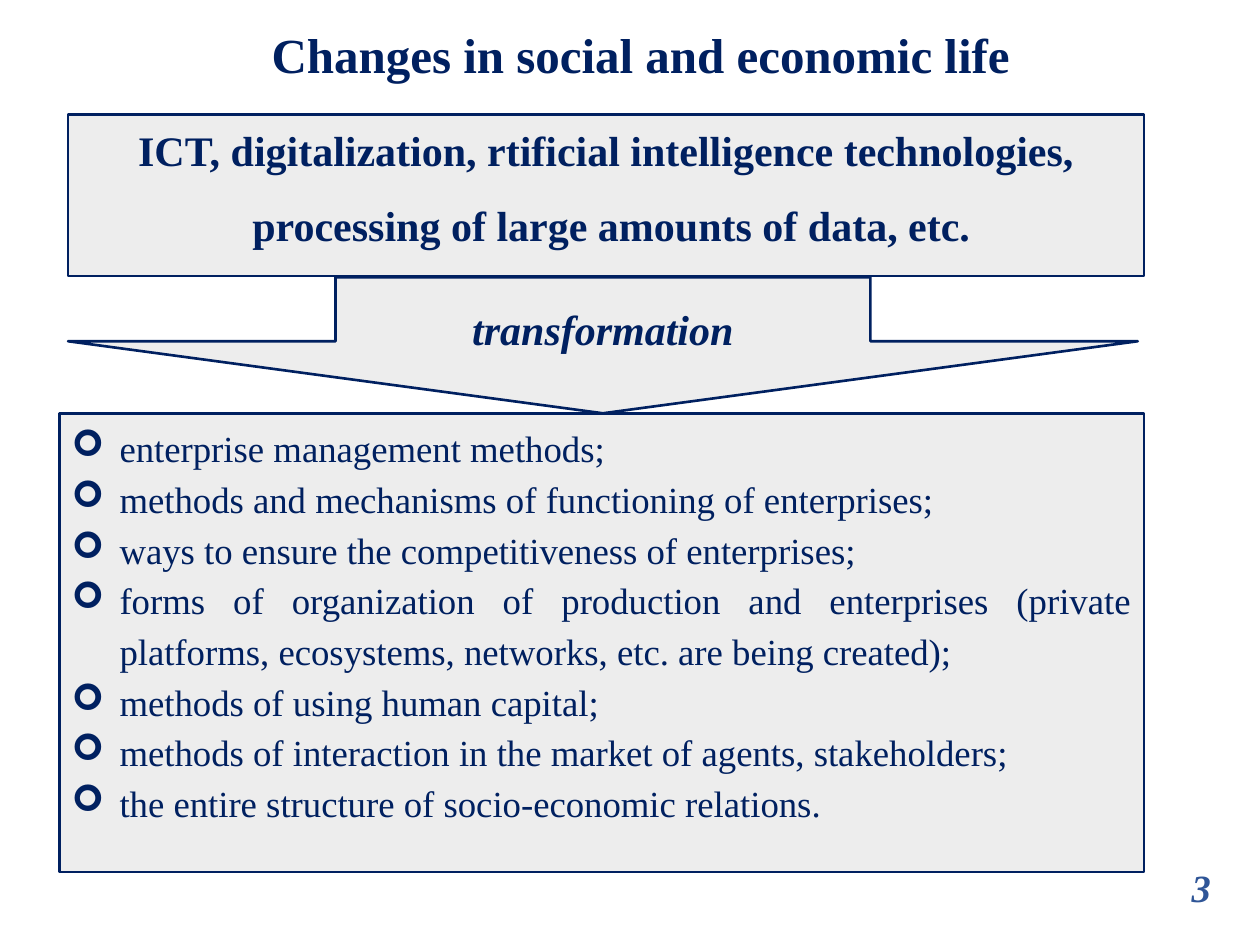
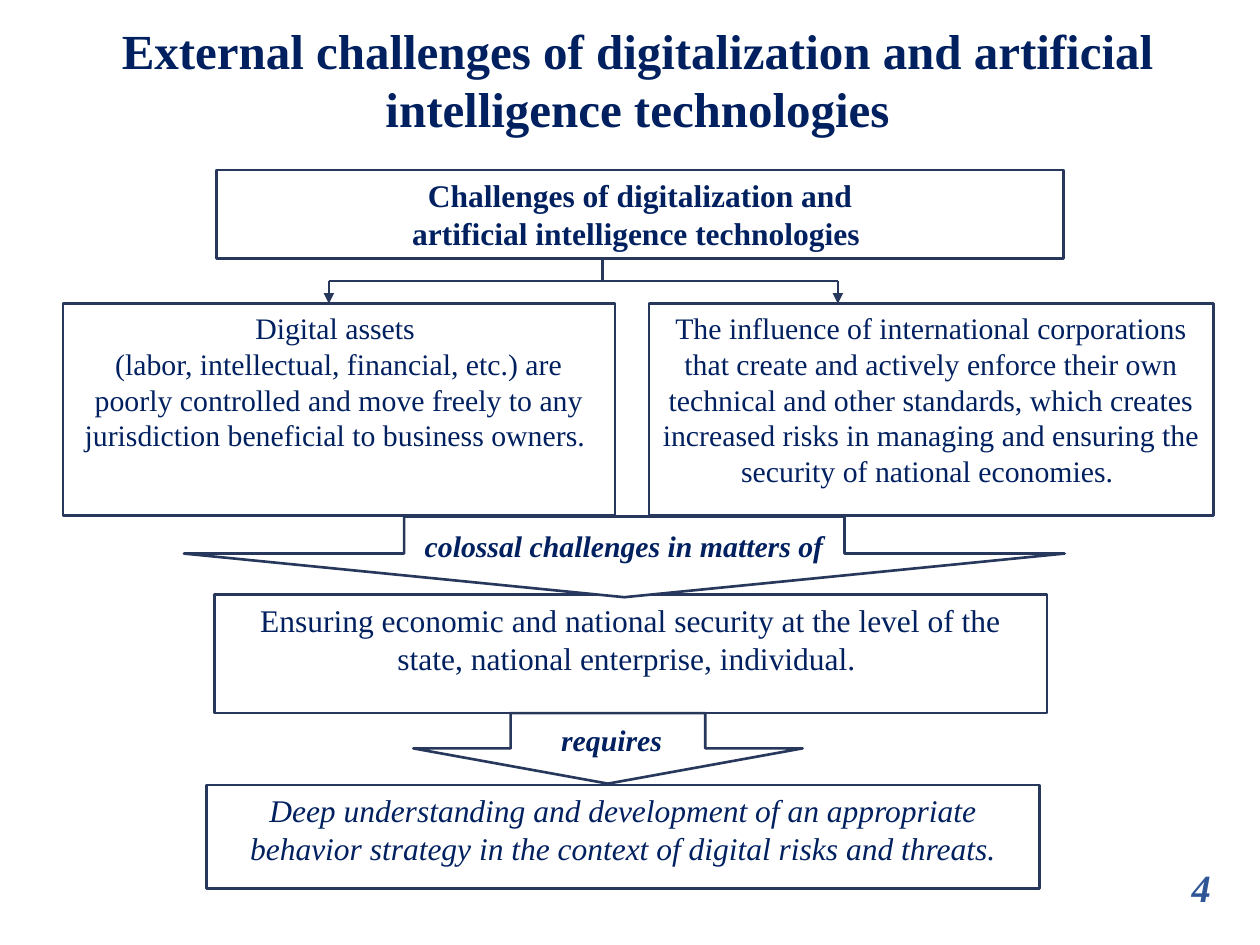
from dataclasses import dataclass
from lxml import etree
from pptx import Presentation
from pptx.dml.color import RGBColor
from pptx.enum import shapes, text
from pptx.oxml import ns
from pptx.util import Inches, Pt


@dataclass(frozen=True)
class Theme:
    font: str = "Times New Roman"
    navy: str = "002060"
    slate: str = "28385C"
    blue: str = "2F5597"
    gray: str = "EDEDED"
    white: str = "FFFFFF"
    title: int = 28
    banner: int = 24
    number: int = 22
    points: int = 21
    body: int = 18
    small: int = 17
    line: float = 1.5


look = Theme()
RECT = shapes.MSO_SHAPE.RECTANGLE
ARROW = shapes.MSO_SHAPE.DOWN_ARROW
CENTER = text.PP_ALIGN.CENTER
JUSTIFY = text.PP_ALIGN.JUSTIFY


def color(code):
    return RGBColor.from_string(code)


def inches(*sizes):
    return [Inches(size) for size in sizes]


def add_node(parent, tag, **values):
    return etree.SubElement(parent, ns.qn(tag), values)


def add_bullet(para, mark, indent):
    props = para._p.get_or_add_pPr()
    props.set("marL", str(Inches(indent)))
    props.set("indent", str(-Inches(indent)))
    add_node(props, "a:buFont", typeface="Wingdings")
    add_node(props, "a:buChar", char=mark)


def write(shape, lines, size, bold=False, italic=False, tint=look.navy,
          align=CENTER, spacing=(1,), mark=None, middle=False):
    frame = shape.text_frame
    frame.word_wrap = True
    frame.vertical_anchor = (text.MSO_ANCHOR.MIDDLE if middle
                             else text.MSO_ANCHOR.TOP)
    for index, line in enumerate(lines):
        para = frame.add_paragraph() if index else frame.paragraphs[0]
        para.alignment = align
        para.line_spacing = spacing[min(index, len(spacing) - 1)]
        if mark:
            add_bullet(para, mark, 0.38)
        run = para.add_run()
        run.text = line
        font = run.font
        font.name, font.size = look.font, Pt(size)
        font.bold, font.italic = bold, italic
        font.color.rgb = color(tint)


def draw_shape(slide, kind, box, lines, fill, edge, head=None, **style):
    shape = slide.shapes.add_shape(kind, *inches(*box))
    shape.shadow.inherit = False
    shape.fill.solid()
    shape.fill.fore_color.rgb = color(fill)
    shape.line.color.rgb = color(edge)
    shape.line.width = Pt(look.line)
    if head:
        shape.adjustments[1] = head
    write(shape, lines, middle=kind == ARROW, **style)
    return shape


def draw_line(slide, start, end, arrow=False):
    line = slide.shapes.add_connector(
        shapes.MSO_CONNECTOR.STRAIGHT, *inches(*start, *end))
    line.line.color.rgb = color(look.slate)
    line.line.width = Pt(look.line)
    if arrow:
        add_node(line.line._get_or_add_ln(), "a:tailEnd", type="triangle")
    add_node(line._element.spPr, "a:effectLst")


def add_label(slide, box, line, **style):
    label = slide.shapes.add_textbox(*inches(*box))
    write(label, [line], bold=True, **style)


def add_frame(deck, box, title, number, spacing=1):
    slide = deck.slides.add_slide(deck.slide_layouts[6])
    add_label(slide, box, title, size=look.title, spacing=(spacing,))
    add_label(slide, (9.36, 6.81, 0.52, 0.47), number, size=look.number,
              italic=True, tint=look.blue, align=text.PP_ALIGN.LEFT)
    return slide


def draw_change(slide, box):
    left, top, width, height = box
    paint = dict(fill=look.gray, edge=look.navy)
    draw_shape(slide, RECT, (left, top + 2.37, width, height - 2.37), [
        "enterprise management methods;",
        "methods and mechanisms of functioning of enterprises;",
        "ways to ensure the competitiveness of enterprises;",
        "forms of organization of production and enterprises (private "
        "platforms, ecosystems, networks, etc. are being created);",
        "methods of using human capital;",
        "methods of interaction in the market of agents, stakeholders;",
        "the entire structure of socio-economic relations.",
    ], size=look.points, align=JUSTIFY, spacing=(1.15,), mark="➢", **paint)
    draw_shape(slide, RECT, (left + 0.07, top, width - 0.07, 1.28), [
        "ICT, digitalization, rtificial intelligence technologies,",
        " processing of large amounts of data, etc.",
    ], size=look.banner, bold=True, spacing=(1.07, 1.5), **paint)
    draw_shape(slide, ARROW, (left + 0.07, top + 1.29, width - 0.12, 1.08),
               ["transformation"], head=0.529, size=look.banner, bold=True,
               italic=True, spacing=(1.07,), **paint)


def draw_fork(slide, box):
    left, top, width, height = box
    bar, stem, right = top + 0.17, left + 2.17, left + width
    for side in (left, right):
        draw_line(slide, (side, bar), (side, top + height), arrow=True)
    draw_line(slide, (stem, bar), (stem, top))
    draw_line(slide, (left, bar), (right, bar))


def draw_threats(slide, box):
    left, top, width, height = box
    paint = dict(fill=look.white, edge=look.slate)
    draw_shape(slide, RECT, (left + 1.22, top, 6.72, 0.7), [
        "Challenges of digitalization and",
        "artificial intelligence technologies ",
    ], size=look.body, bold=True, **paint)
    row = top + 1.06
    draw_shape(slide, RECT, (left, row, 4.38, 1.68), [
        "Digital assets ",
        "(labor, intellectual, financial, etc.) are poorly controlled and "
        "move freely to any jurisdiction beneficial to business owners. ",
    ], size=look.small, **paint)
    draw_shape(slide, RECT, (left + width - 4.48, row, 4.48, 1.68), [
        "The influence of international corporations that create and "
        "actively enforce their own technical and other standards, which "
        "creates increased risks in managing and ensuring the security of "
        "national economies. ",
    ], size=look.small, **paint)
    draw_fork(slide, (left + 2.11, top + 0.71, 4.04, 0.35))


def draw_needs(slide, box):
    left, top, width, height = box
    paint = dict(fill=look.white, edge=look.slate)
    strong = dict(size=look.small, bold=True, italic=True)
    draw_shape(slide, RECT, (left + 0.24, top + 0.62, 6.61, 0.94), [
        "Ensuring economic and national security at the level of the state, "
        "national enterprise, individual. ",
    ], size=look.body, **paint)
    draw_shape(slide, RECT, (left + 0.18, top + height - 0.82, 6.61, 0.82), [
        "Deep understanding and development of an appropriate behavior "
        "strategy in the context of digital risks and threats.",
    ], size=look.body, italic=True, **paint)
    draw_shape(slide, ARROW, (left + 1.82, top + 1.56, 3.09, 0.56),
               [" requires"], **strong, **paint)
    draw_shape(slide, ARROW, (left, top, width, 0.64),
               ["colossal challenges in matters of"], head=0.541,
               **strong, **paint)


def main():
    deck = Presentation()
    deck.slide_width, deck.slide_height = inches(10, 7.5)
    change = add_frame(deck, (0.3, 0.11, 9.57, 0.57),
                       "Changes in social and economic life", "3", 1.07)
    draw_change(change, (0.47, 0.91, 8.61, 6.01))
    threats = add_frame(deck, (0.12, 0.11, 9.88, 1.04),
                        "External challenges of digitalization and "
                        "artificial intelligence technologies", "4")
    draw_threats(threats, (0.5, 1.35, 9.13, 2.74))
    draw_needs(threats, (1.46, 4.1, 6.99, 2.95))
    deck.save("out.pptx")


if __name__ == "__main__":
    main()
